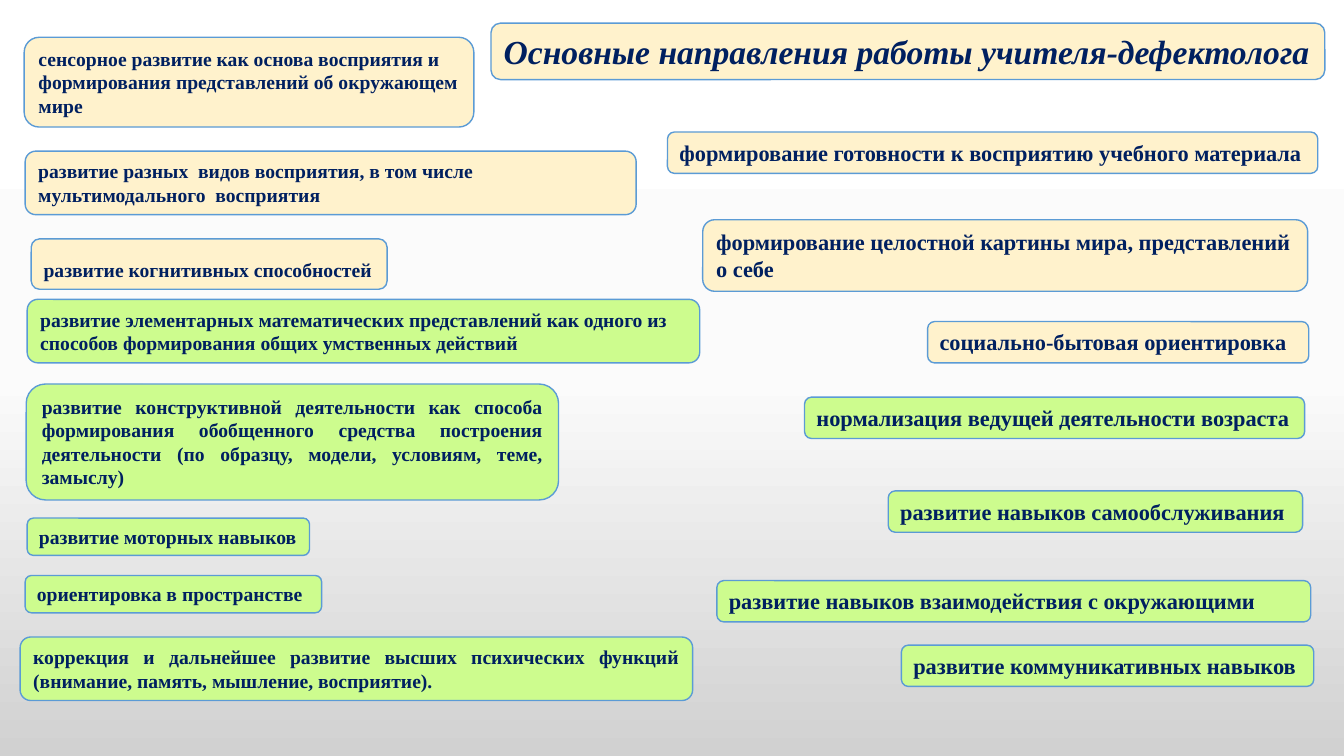
from copy import deepcopy
from dataclasses import dataclass

from pptx import Presentation
from pptx.dml.color import RGBColor
from pptx.enum.shapes import MSO_SHAPE
from pptx.enum.text import MSO_ANCHOR, MSO_AUTO_SIZE, PP_ALIGN
from pptx.oxml.ns import qn
from pptx.util import Inches, Pt

ROUNDED = MSO_SHAPE.ROUNDED_RECTANGLE
TOP = MSO_ANCHOR.TOP
GROW = MSO_AUTO_SIZE.SHAPE_TO_FIT_TEXT
LEFT, JUSTIFY = PP_ALIGN.LEFT, PP_ALIGN.JUSTIFY


@dataclass(frozen=True)
class Theme:
    font: str = "Times New Roman"
    ink: str = "002060"
    outline: str = "5B9BD5"
    cream: str = "FFF2CC"
    green: str = "CDFC8E"
    backdrop: tuple = ((0, "FFFFFF"), (0.5, "FBFBFB"), (1, "D1D1D1"))
    title_size: int = 24
    right_size: int = 16
    left_size: int = 14


THEME = Theme()

# Each direction: (left, top, width, height), fill, text, options
LEFT_DIRECTIONS = [
    ((0.24, 0.37, 4.46, 0.89), THEME.cream,
     "сенсорное развитие как основа восприятия и формирования "
     "представлений об окружающем мире", {}),
    ((0.25, 1.5, 6.06, 0.63), THEME.cream,
     "развитие разных  видов восприятия, в том числе "
     "мультимодального  восприятия", {}),
    ((0.31, 2.37, 3.53, 0.5), THEME.cream, "развитие когнитивных способностей",
     {"wrap": False, "align": JUSTIFY, "spacing": 1.5}),
    ((0.27, 2.97, 6.67, 0.63), THEME.green,
     "развитие элементарных математических представлений как одного из "
     "способов формирования общих умственных действий", {}),
    ((0.26, 3.81, 5.28, 1.15), THEME.green,
     "развитие конструктивной деятельности как способа формирования "
     "обобщенного средства построения деятельности (по образцу, модели, "
     "условиям, теме, замыслу)", {"align": JUSTIFY}),
    ((0.27, 5.14, 2.8, 0.37), THEME.green, "развитие моторных навыков",
     {"wrap": False}),
    ((0.25, 5.71, 2.94, 0.37), THEME.green, "ориентировка в пространстве",
     {"wrap": False}),
    ((0.2, 6.32, 6.67, 0.63), THEME.green,
     "коррекция и дальнейшее развитие высших психических функций "
     "(внимание, память, мышление, восприятие).", {"align": JUSTIFY}),
]
RIGHT_DIRECTIONS = [
    ((6.62, 1.31, 6.45, 0.41), THEME.cream,
     "формирование готовности к восприятию учебного материала",
     {"wrap": False}),
    ((6.97, 2.18, 6, 0.71), THEME.cream,
     "формирование целостной картины мира, представлений\nо себе", {}),
    ((9.2, 3.19, 3.78, 0.41), THEME.cream, "социально-бытовая ориентировка",
     {"wrap": False}),
    ((7.98, 3.94, 4.96, 0.41), THEME.green,
     "нормализация ведущей деятельности возраста", {"wrap": False}),
    ((8.81, 4.87, 4.11, 0.41), THEME.green,
     "развитие навыков самообслуживания", {"wrap": False}),
    ((7.11, 5.76, 5.89, 0.41), THEME.green,
     "развитие навыков взаимодействия с окружающими", {}),
    ((8.94, 6.4, 4.09, 0.41), THEME.green,
     "развитие коммуникативных навыков", {"wrap": False}),
]


def paint_background(slide):
    fill = slide.background.fill
    fill.gradient()
    fill.gradient_angle = 270  # counter-clockwise, so top to bottom
    # The default gradient has two stops; a third is added
    stop_list = slide.element.find(".//" + qn("a:gsLst"))
    stop_list.append(deepcopy(stop_list[-1]))
    for stop, (position, color) in zip(fill.gradient_stops, THEME.backdrop):
        stop.position = position
        stop.color.rgb = RGBColor.from_string(color)


def add_card(slide, box, fill, text, size, wrap=True, align=LEFT,
             spacing=None, italic=None):
    card = slide.shapes.add_shape(ROUNDED, *(Inches(value) for value in box))
    card.shadow.inherit = False
    card.fill.solid()
    card.fill.fore_color.rgb = RGBColor.from_string(fill)
    card.line.color.rgb = RGBColor.from_string(THEME.outline)
    card.line.width = Pt(1)

    frame = card.text_frame
    frame.word_wrap = wrap
    frame.auto_size = GROW
    frame.vertical_anchor = TOP
    for index, line in enumerate(text.split("\n")):
        paragraph = frame.add_paragraph() if index else frame.paragraphs[0]
        paragraph.alignment = align
        paragraph.line_spacing = spacing
        run = paragraph.add_run()
        run.text = line
        run.font.name = THEME.font
        run.font.size = Pt(size)
        run.font.bold = True
        run.font.italic = italic
        run.font.color.rgb = RGBColor.from_string(THEME.ink)


def main():
    deck = Presentation()
    deck.slide_width, deck.slide_height = Inches(13.33), Inches(7.5)
    slide = deck.slides.add_slide(deck.slide_layouts[6])
    paint_background(slide)

    # Title
    add_card(slide, (4.87, 0.23, 8.27, 0.56), THEME.cream,
             "Основные направления работы учителя-дефектолога",
             THEME.title_size, wrap=False, italic=True)

    # Two columns of directions
    for directions, size in ((LEFT_DIRECTIONS, THEME.left_size),
                             (RIGHT_DIRECTIONS, THEME.right_size)):
        for box, fill, text, options in directions:
            add_card(slide, box, fill, text, size, **options)

    deck.save("out.pptx")


if __name__ == "__main__":
    main()
